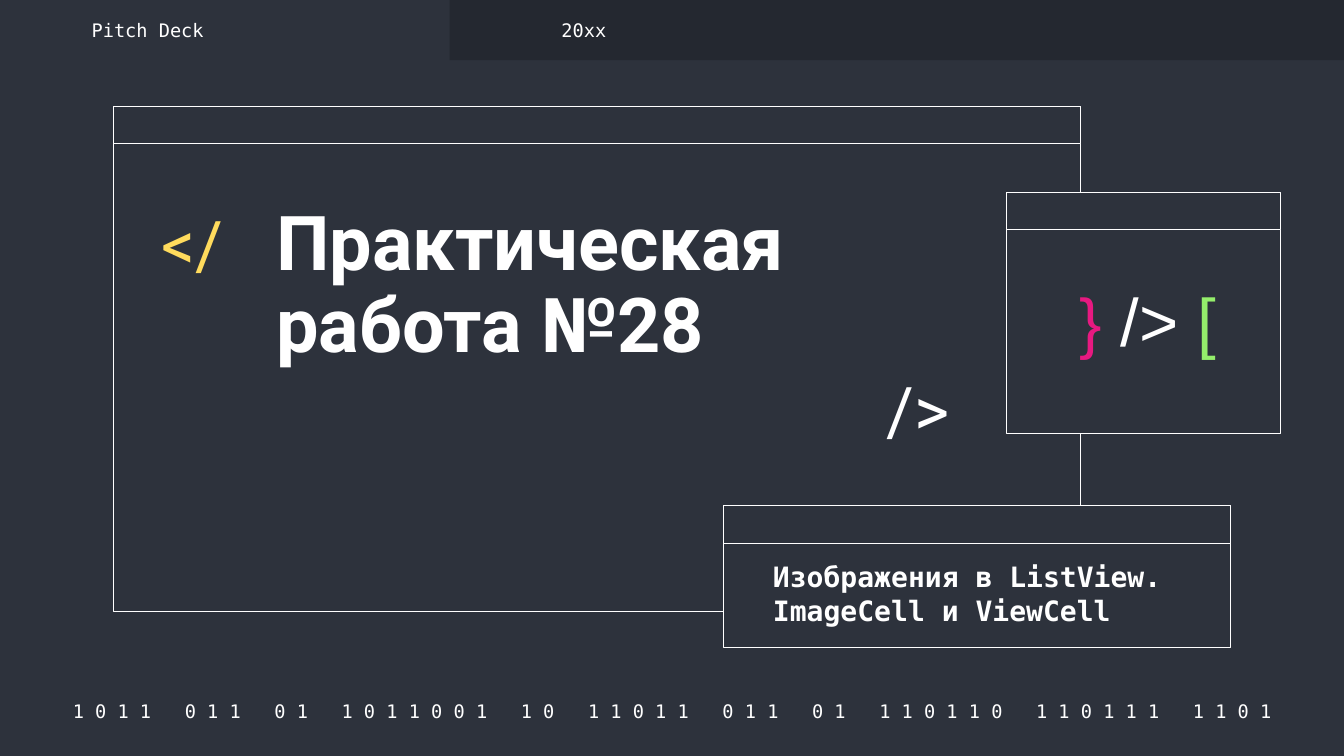
from pptx import Presentation
from pptx import util as u
from pptx.dml import color
from pptx.enum import shapes, text


class Theme:
    back = color.RGBColor(0x2D, 0x32, 0x3C)
    dark = color.RGBColor(0x24, 0x28, 0x30)
    white = color.RGBColor(0xFF, 0xFF, 0xFF)
    gold = color.RGBColor(0xFF, 0xDB, 0x5D)
    pink = color.RGBColor(0xE8, 0x19, 0x81)
    green = color.RGBColor(0x94, 0xEE, 0x6B)
    mono, sans, plain = "DejaVu Sans Mono", "Roboto", "Arial"
    small, medium, code, large = 13.3, 20, 48, 54


deck = Presentation()
deck.slide_width, deck.slide_height = u.Cm(33.87), u.Cm(19.05)
slide = deck.slides.add_slide(deck.slide_layouts[6])
slide.background.fill.solid()
slide.background.fill.fore_color.rgb = Theme.back


def panel(area, fill, line=None):
    rect = slide.shapes.add_shape(
        shapes.MSO_SHAPE.RECTANGLE, *[u.Cm(n) for n in area])
    rect.shadow.inherit = False
    rect.fill.solid()
    rect.fill.fore_color.rgb = fill
    if line is None:
        rect.line.fill.background()
    else:
        rect.line.color.rgb = line
        rect.line.width = u.Pt(0.75)


def label(area, parts, font, size, bold=False, align="LEFT", anchor="MIDDLE", space=1.0):
    frame = slide.shapes.add_textbox(*[u.Cm(n) for n in area]).text_frame
    frame.word_wrap = True
    frame.vertical_anchor = text.MSO_ANCHOR[anchor]
    frame.margin_left = frame.margin_right = u.Cm(0.33)
    frame.margin_top = frame.margin_bottom = u.Cm(0.33)
    para = frame.paragraphs[0]
    para.alignment = text.PP_ALIGN[align]
    para.line_spacing = space
    for words, tint in parts:
        run = para.add_run()
        run.text = words
        run.font.name, run.font.size, run.font.bold = font, u.Pt(size), bold
        run.font.color.rgb = tint


bits = "1011 011 01 1011001 10 11011 011 01 110110 110111 1101"
binary = "   ".join(" ".join(group) for group in bits.split())
label((1.27, 17.6, 31.4, 0.66), [(binary, Theme.white)],
      Theme.mono, Theme.small, align="CENTER")

panel((11.33, 0, 22.54, 1.52), Theme.dark)

windows = [
    (2.87, 2.69, 24.36, 12.73),
    (18.24, 12.75, 12.78, 3.56),
    (25.37, 4.85, 6.91, 6.07),
]
for left, top, width, height in windows:
    for tall in (height, 0.94):
        panel((left, top, width, tall), Theme.back, Theme.white)

for left, top, sign, tint in [(3.73, 5.13, "</", Theme.gold),
                              (22.02, 9.3, "/>", Theme.white)]:
    label((left, top, 2.59, 2.24), [(sign, tint)], Theme.sans, Theme.code, space=0.9)

label((26.67, 6.93, 4.5, 2.77),
      [("}", Theme.pink), (" /> ", Theme.white), ("[", Theme.green)],
      Theme.plain, Theme.code, align="CENTER", anchor="TOP", space=0.9)

label((6.63, 4.85, 15.37, 6.22), [("Практическая работа №28", Theme.white)],
      Theme.sans, Theme.large, bold=True, anchor="TOP", space=0.9)

label((19.15, 13.97, 11.28, 1.96),
      [("Изображения в ListView. ImageCell и ViewCell", Theme.white)],
      Theme.mono, Theme.medium, bold=True)

for left, words in [(1.98, "Pitch Deck"), (13.82, "20xx")]:
    label((left, 0.43, 7.42, 0.66), [(words, Theme.white)], Theme.mono, Theme.small)

deck.save("out.pptx")
